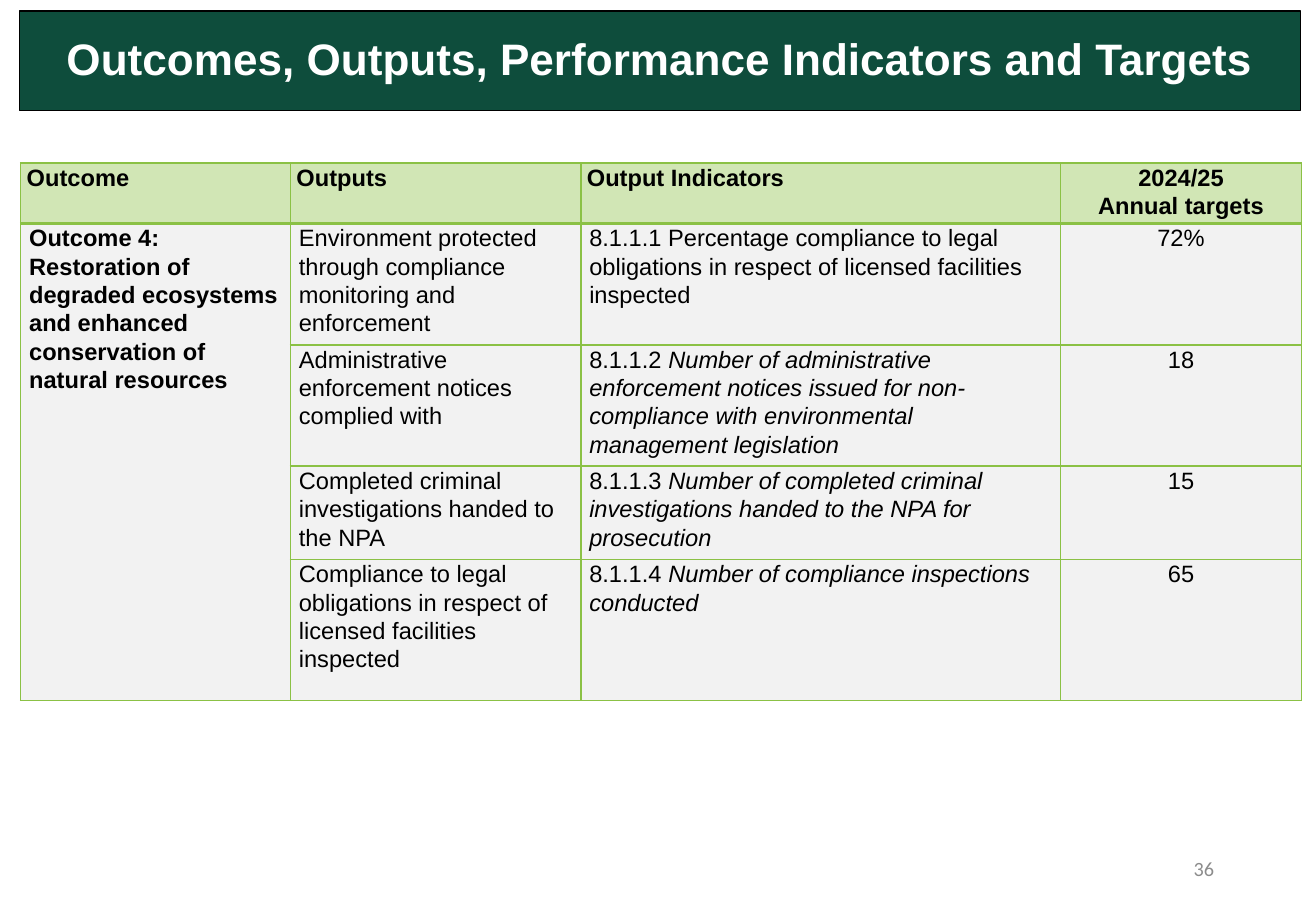
from lxml.etree import SubElement
from pptx import Presentation
from pptx.dml.color import RGBColor
from pptx.enum.text import MSO_ANCHOR, MSO_AUTO_SIZE, PP_ALIGN
from pptx.oxml.ns import qn
from pptx.util import Inches, Pt

DARK_GREEN = RGBColor(0x0E, 0x4D, 0x3C)
BORDER_GREEN = RGBColor(0x8B, 0xC1, 0x45)
HEADER_GREEN = RGBColor(0xD1, 0xE6, 0xB5)
BODY_GREY = RGBColor(0xF2, 0xF2, 0xF2)
NUMBER_GREY = RGBColor(0x8C, 0x8C, 0x8C)
BLACK = RGBColor(0, 0, 0)
WHITE = RGBColor(0xFF, 0xFF, 0xFF)

COLUMN_WIDTHS = [2.22, 2.39, 3.95, 1.98]
ROW_HEIGHTS = [0.47, 0.82, 0.82, 0.77, 1.16]
HEADERS = [["Outcome"], ["Outputs"], ["Output Indicators"],
           ["2024/25", "Annual targets"]]
OUTCOME = ("Outcome 4: Restoration of degraded ecosystems and enhanced "
           "conservation of natural resources")

# Each target row: output, indicator upright part, indicator italic part, target
TARGETS = [
    ("Environment protected through compliance monitoring and enforcement",
     "8.1.1.1 Percentage compliance to legal obligations in respect of "
     "licensed facilities inspected", "", "72%"),
    ("Administrative enforcement notices complied with",
     "8.1.1.2 ", "Number of administrative enforcement notices issued for "
     "non-compliance with environmental management legislation", "18"),
    ("Completed criminal investigations handed to the NPA",
     "8.1.1.3 ", "Number of completed criminal investigations handed to the "
     "NPA for prosecution", "15"),
    ("Compliance to legal obligations in respect of licensed facilities "
     "inspected",
     "8.1.1.4 ", "Number of compliance inspections conducted", "65"),
]


def add_run(paragraph, text, size, color, font="Arial", bold=False, italic=False):
    run = paragraph.add_run()
    run.text = text
    run.font.name = font
    run.font.size = Pt(size)
    run.font.bold = bold
    run.font.italic = italic
    run.font.color.rgb = color


def place(shape, left, top, width, height):
    shape.left, shape.top = Inches(left), Inches(top)
    shape.width, shape.height = Inches(width), Inches(height)


def add_title(slide, text):
    title = slide.shapes.title
    place(title, 0.16, 0.09, 10.54, 0.82)
    title.fill.solid()
    title.fill.fore_color.rgb = DARK_GREEN
    title.line.color.rgb = BLACK
    title.line.width = Pt(0.75)
    frame = title.text_frame
    frame.auto_size = MSO_AUTO_SIZE.NONE
    frame.vertical_anchor = MSO_ANCHOR.MIDDLE
    heading = frame.paragraphs[0]
    heading.alignment = PP_ALIGN.CENTER
    heading.line_spacing = 0.9
    add_run(heading, text, 26.1, WHITE, bold=True)


def add_page_number(slide, number):
    page_number = slide.shapes.add_textbox(
        Inches(7.65), Inches(6.95), Inches(2.44), Inches(0.4))
    frame = page_number.text_frame
    frame.word_wrap = True
    frame.vertical_anchor = MSO_ANCHOR.MIDDLE
    frame.paragraphs[0].alignment = PP_ALIGN.RIGHT
    add_run(frame.paragraphs[0], number, 12, NUMBER_GREY, font="Calibri")


def set_borders(cell, top=1, bottom=1):
    properties = cell._tc.get_or_add_tcPr()
    for side, width in (("L", 1), ("R", 1), ("T", top), ("B", bottom)):
        line = SubElement(properties, qn(f"a:ln{side}"), w=str(Pt(width)))
        fill = SubElement(line, qn("a:solidFill"))
        SubElement(fill, qn("a:srgbClr"), val=str(BORDER_GREEN))


def style_cell(cell, fill, inset):
    cell.fill.solid()
    cell.fill.fore_color.rgb = fill
    cell.margin_left = cell.margin_right = Inches(inset)
    cell.margin_top = cell.margin_bottom = 0
    cell.vertical_anchor = MSO_ANCHOR.TOP


def write_cell(cell, paragraphs, bold=False, centered=False):
    """Each paragraph is a list of (text, italic) runs."""
    frame = cell.text_frame
    for index, runs in enumerate(paragraphs):
        paragraph = frame.add_paragraph() if index else frame.paragraphs[0]
        paragraph.alignment = PP_ALIGN.CENTER if centered else PP_ALIGN.LEFT
        paragraph.line_spacing = 1.07
        paragraph.space_after = Pt(8 if index == len(paragraphs) - 1 else 0)
        for text, italic in runs:
            if text:
                add_run(paragraph, text, 14, BLACK, bold=bold, italic=italic)


def add_targets_table(slide):
    table = slide.shapes.add_table(
        len(ROW_HEIGHTS), len(COLUMN_WIDTHS), Inches(0.17), Inches(1.34),
        Inches(sum(COLUMN_WIDTHS)), Inches(sum(ROW_HEIGHTS))).table
    table.horz_banding = False
    for column, width in zip(table.columns, COLUMN_WIDTHS):
        column.width = Inches(width)

    # Row heights, borders and fills
    for row_index, (row, height) in enumerate(zip(table.rows, ROW_HEIGHTS)):
        row.height = Inches(height)
        is_header = row_index == 0
        for cell in row.cells:
            set_borders(cell, top=2 if row_index == 1 else 1,
                        bottom=2 if is_header else 1)
            style_cell(cell, HEADER_GREEN if is_header else BODY_GREY,
                       0.05 if is_header else 0.07)

    # Header row
    for index, lines in enumerate(HEADERS):
        write_cell(table.cell(0, index), [[(line, False)] for line in lines],
                   bold=True, centered=index == len(HEADERS) - 1)

    # Outcome spanning all its targets
    outcome = table.cell(1, 0)
    outcome.merge(table.cell(len(TARGETS), 0))
    write_cell(outcome, [[(OUTCOME, False)]], bold=True)

    # Outputs, indicators and targets
    for row_index, (output, upright, italic, target) in enumerate(TARGETS, 1):
        write_cell(table.cell(row_index, 1), [[(output, False)]])
        write_cell(table.cell(row_index, 2), [[(upright, False), (italic, True)]])
        write_cell(table.cell(row_index, 3), [[(target, False)]], centered=True)


def main():
    presentation = Presentation()
    presentation.slide_width = Inches(10.83)
    presentation.slide_height = Inches(7.5)
    title_only = presentation.slide_layouts[5]
    slide = presentation.slides.add_slide(title_only)
    add_title(slide, "Outcomes, Outputs, Performance Indicators and Targets")
    add_page_number(slide, "36")
    add_targets_table(slide)
    presentation.save("out.pptx")


if __name__ == "__main__":
    main()
